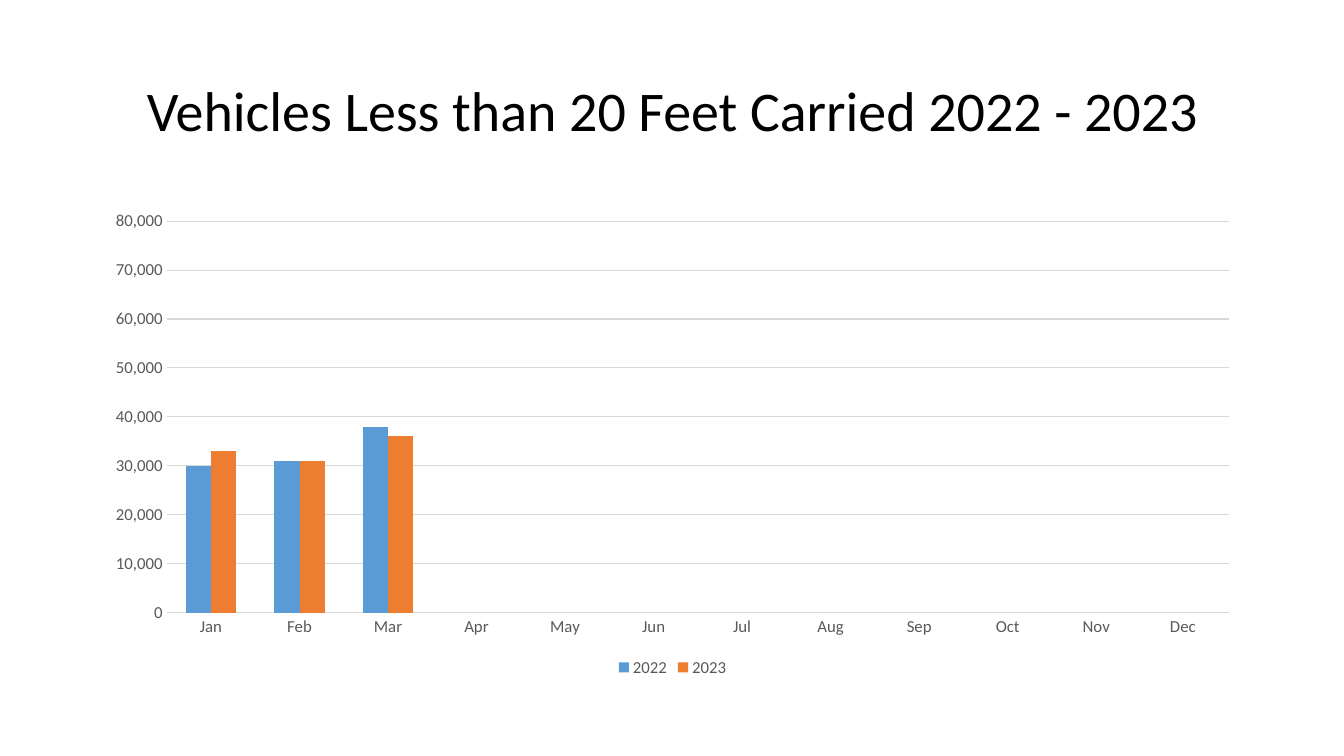
from pptx import Presentation
from pptx.chart.data import CategoryChartData
from pptx.dml.color import RGBColor
from pptx.enum import chart as ch, text
from pptx.util import Inches, Pt

FONT = "Calibri"
GREY = "595959"
LEFT, WIDTH = 0.92, 11.5
MONTHS = ["Jan", "Feb", "Mar", "Apr", "May", "Jun",
          "Jul", "Aug", "Sep", "Oct", "Nov", "Dec "]
# Year, bar colour, vehicles carried in the months reported so far
YEARS = [
    ("2022", "5B9BD5", [30000, 31000, 38000]),
    ("2023", "ED7D31", [33000, 31000, 36000]),
]


def rgb(value):
    return RGBColor.from_string(value)


def style_font(font, size, color):
    font.name = FONT
    font.size = Pt(size)
    font.color.rgb = rgb(color)


def add_title(s, wording, top, height):
    sp = s.shapes.add_textbox(Inches(LEFT), Inches(top), Inches(WIDTH), Inches(height))
    tf = sp.text_frame
    tf.word_wrap = True
    tf.vertical_anchor = text.MSO_ANCHOR.MIDDLE
    p = tf.paragraphs[0]
    p.alignment = text.PP_ALIGN.CENTER
    p.line_spacing = 0.9
    r = p.add_run()
    r.text = wording
    style_font(r.font, 40, "000000")


def style_axis(axis):
    axis.major_tick_mark = axis.minor_tick_mark = ch.XL_TICK_MARK.NONE
    axis.format.line.fill.background()
    style_font(axis.tick_labels.font, 12, GREY)


def add_column_chart(s, top, height):
    data = CategoryChartData(number_format="#,##0")
    data.categories = MONTHS
    for year, _, vehicles in YEARS:
        data.add_series(year, vehicles + [None] * (len(MONTHS) - len(vehicles)))
    chart = s.shapes.add_chart(
        ch.XL_CHART_TYPE.COLUMN_CLUSTERED, Inches(LEFT), Inches(top),
        Inches(WIDTH), Inches(height), data).chart
    chart.has_title = False
    style_font(chart.font, 10, "000000")

    # Columns
    plot = chart.plots[0]
    plot.vary_by_categories = False
    plot.gap_width = 150
    plot.overlap = 0
    for series, (_, color, _) in zip(plot.series, YEARS):
        series.format.fill.solid()
        series.format.fill.fore_color.rgb = rgb(color)

    # Axes and gridlines
    style_axis(chart.category_axis)
    axis = chart.value_axis
    style_axis(axis)
    axis.minimum_scale, axis.maximum_scale, axis.major_unit = 0, 80000, 10000
    axis.tick_labels.number_format = "#,##0"
    axis.tick_labels.number_format_is_linked = False
    axis.has_major_gridlines = True
    grid = axis.major_gridlines.format.line
    grid.color.rgb = rgb("D9D9D9")
    grid.width = Pt(0.75)

    # Legend
    chart.has_legend = True
    chart.legend.position = ch.XL_LEGEND_POSITION.BOTTOM
    chart.legend.include_in_layout = False
    style_font(chart.legend.font, 12, GREY)


def main():
    prs = Presentation()
    prs.slide_width, prs.slide_height = Inches(13.33), Inches(7.5)
    s = prs.slides.add_slide(prs.slide_layouts[6])
    add_title(s, "Vehicles Less than 20 Feet Carried 2022 - 2023", 0.4, 1.45)
    add_column_chart(s, 2, 4.76)
    prs.save("out.pptx")


if __name__ == "__main__":
    main()
